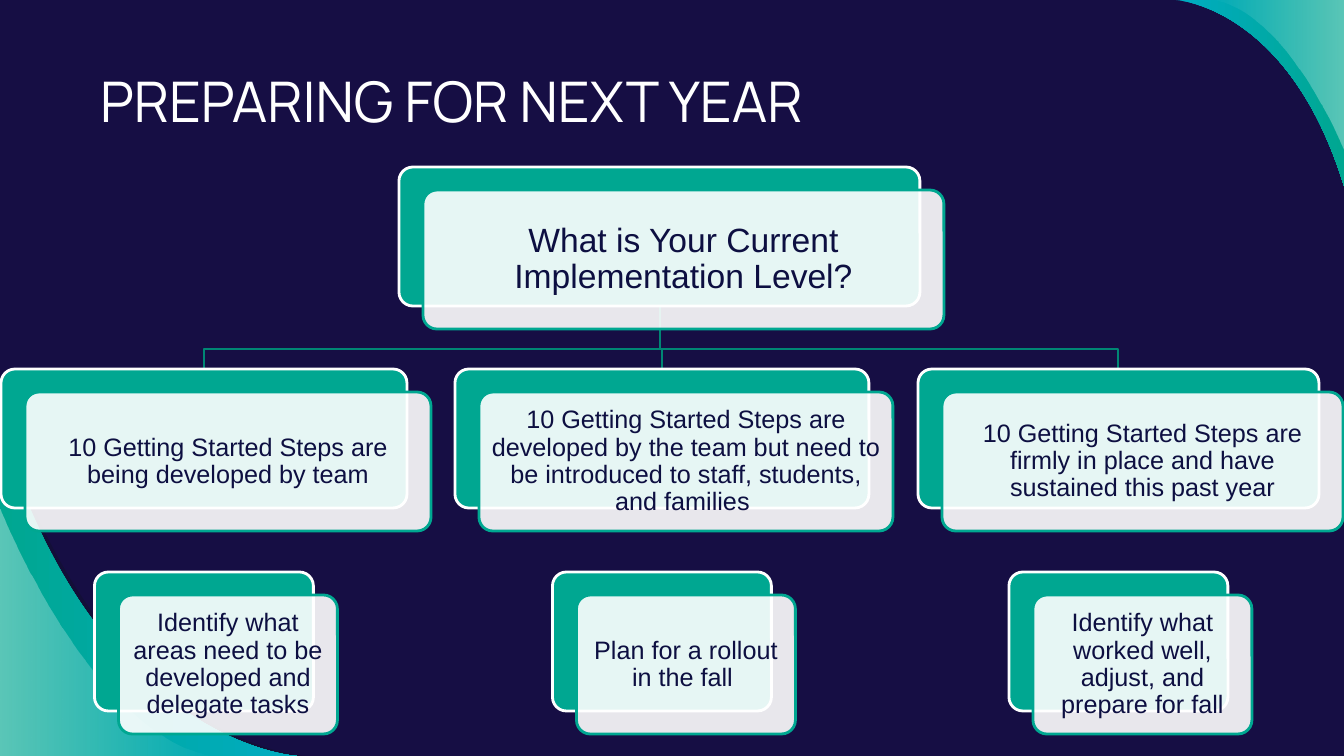
"""Build the slide on preparing for next year: a tree of implementation levels."""
import pptx
import pptx.dml.color
import pptx.enum.shapes
import pptx.enum.text
import pptx.oxml
import pptx.oxml.ns
import pptx.util

TITLE = "PREPARING FOR NEXT YEAR"
QUESTION = "What is Your Current Implementation Level?"
LEVELS = [
    {"left": 1, "width": 406,
     "level": "10 Getting Started Steps are being developed by team",
     "action": "Identify what areas need to be developed and delegate tasks"},
    {"left": 455, "width": 414,
     "level": "10 Getting Started Steps are developed by the team but need to "
              "be introduced to staff, students, and families ",
     "action": "Plan for a rollout in the fall "},
    {"left": 918, "width": 401,
     "level": "10 Getting Started Steps are firmly in place and have sustained this past year",
     "action": "Identify what worked well, adjust, and prepare for fall"},
]

NAVY, SHADE, INK, WHITE = "160E44", "12102F", "0D0F41", "FFFFFF"
BLUE, GREEN, BRANCH_LINE, ACTION_LINE = "00ACC2", "00A791", "008674", "009884"

# Each swoosh: four curve points, the corner it fills, gradient stops (colour, opacity)
SWOOSHES = [
    ([(0, 416), (99, 745), (305, 756), (305, 756)], (0, 756), [(SHADE, 54)]),
    ([(0, 425), (96, 745), (297, 756), (297, 756)], (0, 756), [(GREEN, 100), (BLUE, 100)]),
    ([(0, 510), (0, 510), (92, 741), (218, 756)], (0, 756), [(WHITE, 36), (WHITE, 0)]),
    ([(1176, 0), (1176, 0), (1289, 6), (1344, 186)], (1344, 0), [(BLUE, 100), (GREEN, 100)]),
    ([(1211, 0), (1287, 9), (1344, 150), (1344, 150)], (1344, 0), [(WHITE, 0), (WHITE, 36)]),
]

SCALE = 12192000 / 1344
CARD_HEIGHT, CARD_SHIFT, ACTION_WIDTH = 139, (24, 23), 219
QUESTION_LEFT, QUESTION_WIDTH = 399, 521
QUESTION_TOP, LEVEL_TOP, ACTION_TOP = 167, 369, 572
JUNCTION, DROP_MARGIN = 349, 5


def px(length):
    """Turn pixels into EMU."""
    return round(length * SCALE)


def rgb(colour):
    """Turn a hex string into a colour."""
    return pptx.dml.color.RGBColor.from_string(colour)


def set_opacity(shape, opacities):
    """Give the fill colours of a shape their opacity in percent."""
    colours = shape._element.spPr.iterfind(".//" + pptx.oxml.ns.qn("a:srgbClr"))
    for colour, opacity in zip(list(colours), opacities):
        alpha = pptx.oxml.parse_xml(f'<a:alpha {pptx.oxml.ns.nsdecls("a")} val="{opacity * 1000}"/>')
        colour.append(alpha)


def write(frame, text, size, font, colour, align="LEFT", anchor="MIDDLE", margin=10, spacing=1.0):
    """Fill a text frame with one formatted paragraph."""
    frame.word_wrap = True
    frame.auto_size = pptx.enum.text.MSO_AUTO_SIZE.NONE
    frame.vertical_anchor = getattr(pptx.enum.text.MSO_ANCHOR, anchor)
    frame.margin_left = frame.margin_right = px(margin)
    frame.margin_top = frame.margin_bottom = px(margin)
    frame.text = text
    paragraph = frame.paragraphs[0]
    paragraph.alignment = getattr(pptx.enum.text.PP_ALIGN, align)
    paragraph.line_spacing = spacing
    paragraph.font.size = pptx.util.Pt(size)
    paragraph.font.name = font
    paragraph.font.color.rgb = rgb(colour)


def outline(shape, colour):
    """Give a shape its two-point line."""
    shape.line.color.rgb = rgb(colour)
    shape.line.width = pptx.util.Pt(2)


def add_path(slide, points, close):
    """Draw a shape through points given in pixels."""
    builder = slide.shapes.build_freeform(*points[0], scale=SCALE)
    builder.add_line_segments(points[1:], close=close)
    shape = builder.convert_to_shape()
    shape.shadow.inherit = False
    return shape


def bend(shape):
    """Turn the first three segments of a shape into one cubic curve."""
    outline_path = shape._element.spPr.find(".//" + pptx.oxml.ns.qn("a:path"))
    cubic = pptx.oxml.parse_xml(f'<a:cubicBezTo {pptx.oxml.ns.nsdecls("a")}/>')
    for segment in outline_path.findall(pptx.oxml.ns.qn("a:lnTo"))[:3]:
        cubic.append(segment[0])
        outline_path.remove(segment)
    outline_path.insert(1, cubic)


def add_swoosh(slide, points, corner, stops):
    """Draw a curved corner with a plain or gradient fill."""
    swoosh = add_path(slide, points + [corner], close=True)
    bend(swoosh)
    swoosh.line.fill.background()
    if len(stops) == 1:
        swoosh.fill.solid()
        swoosh.fill.fore_color.rgb = rgb(stops[0][0])
    else:
        swoosh.fill.gradient()
        swoosh.fill.gradient_angle = 0
        for stop, (colour, _) in zip(swoosh.fill.gradient_stops, stops):
            stop.color.rgb = rgb(colour)
    set_opacity(swoosh, [opacity for _, opacity in stops])


def add_branch(slide, start, end):
    """Draw the bent line from the question to a level."""
    branch = add_path(slide, [(start, QUESTION_TOP + CARD_HEIGHT), (start, JUNCTION),
                              (end, JUNCTION), (end, LEVEL_TOP)], close=False)
    branch.fill.background()
    outline(branch, BRANCH_LINE)


def add_drop(slide, x):
    """Draw the upright line from a level to its action, centred in a narrow frame."""
    drop = add_path(slide, [(x - DROP_MARGIN, LEVEL_TOP + CARD_HEIGHT),
                            (x + DROP_MARGIN, ACTION_TOP)], close=False)
    for point in drop._element.spPr.iterfind(".//" + pptx.oxml.ns.qn("a:pt")):
        point.set("x", str(px(DROP_MARGIN)))
    drop.fill.background()
    outline(drop, ACTION_LINE)


def add_card(slide, left, top, width, text, size=18, margin=7):
    """Draw a green card with a shifted, translucent text card over it."""
    for shift, fill, line in (((0, 0), GREEN, WHITE), (CARD_SHIFT, WHITE, GREEN)):
        card = slide.shapes.add_shape(
            pptx.enum.shapes.MSO_SHAPE.ROUNDED_RECTANGLE,
            px(left + shift[0]), px(top + shift[1]), px(width), px(CARD_HEIGHT))
        card.adjustments[0] = 0.1
        card.shadow.inherit = False
        card.fill.solid()
        card.fill.fore_color.rgb = rgb(fill)
        outline(card, line)
    set_opacity(card, [90])
    write(card.text_frame, text, size=size, font="Arial", colour=INK,
          align="CENTER", margin=margin, spacing=0.9)


def main():
    """Build and save the slide."""
    deck = pptx.Presentation()
    deck.slide_width, deck.slide_height = px(1344), px(756)
    slide = deck.slides.add_slide(deck.slide_layouts[5])
    slide.background.fill.solid()
    slide.background.fill.fore_color.rgb = rgb(NAVY)

    for points, corner, stops in SWOOSHES:
        add_swoosh(slide, points, corner, stops)

    title = slide.shapes.title
    title.left, title.top, title.width, title.height = px(90), px(51), px(1034), px(93)
    write(title.text_frame, TITLE, size=40, font="Manrope", colour=WHITE, anchor="BOTTOM")

    centres = [level["left"] + level["width"] / 2 for level in LEVELS]
    for centre in centres:
        add_branch(slide, QUESTION_LEFT + QUESTION_WIDTH / 2, centre)
        add_drop(slide, centre)

    add_card(slide, QUESTION_LEFT, QUESTION_TOP, QUESTION_WIDTH, QUESTION, size=24, margin=10)
    for level, centre in zip(LEVELS, centres):
        add_card(slide, level["left"], LEVEL_TOP, level["width"], level["level"])
        add_card(slide, centre - ACTION_WIDTH / 2, ACTION_TOP, ACTION_WIDTH, level["action"])

    deck.save("out.pptx")


if __name__ == "__main__":
    main()
